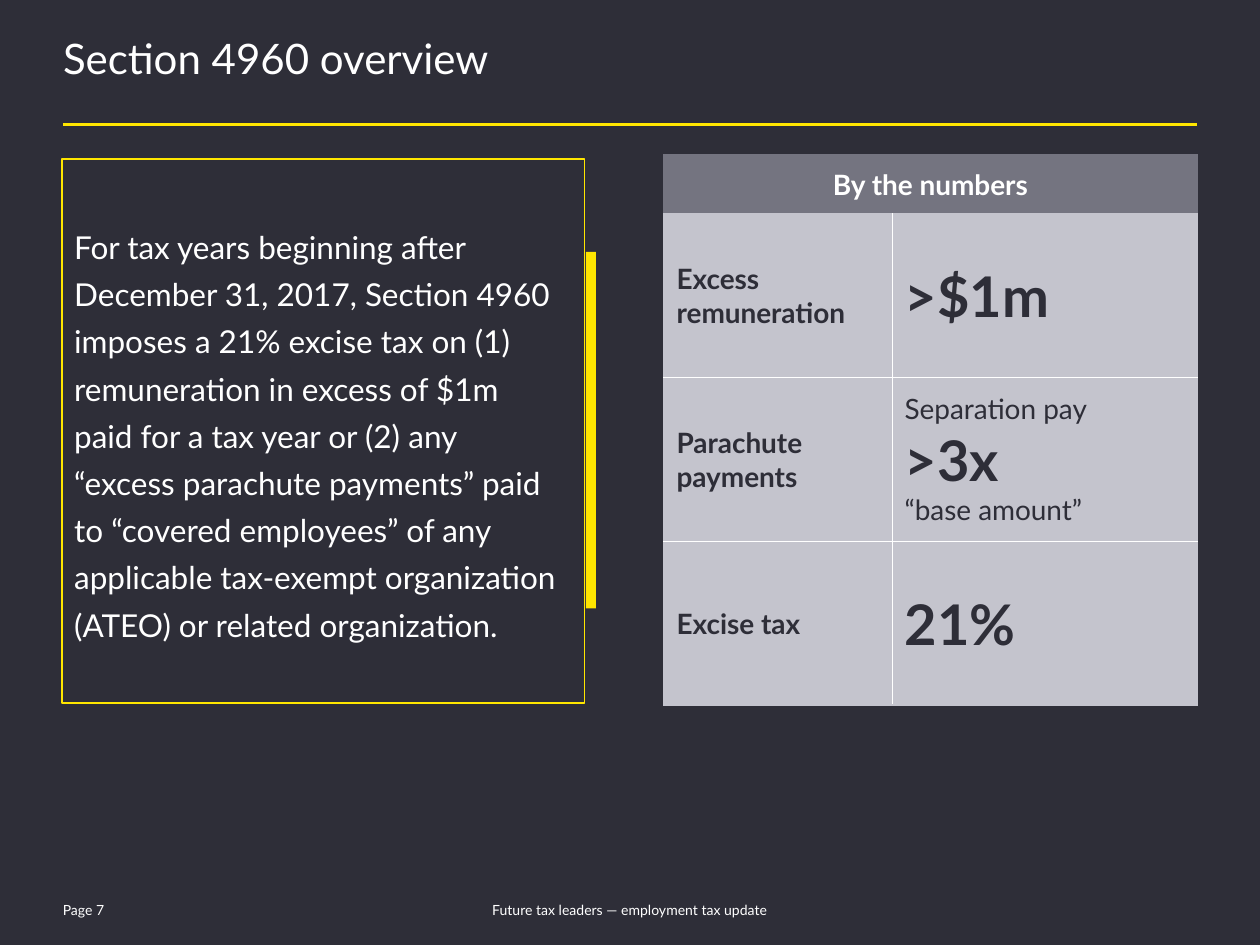
from dataclasses import dataclass

from lxml.etree import SubElement
from pptx import Presentation
from pptx.dml.color import RGBColor
from pptx.enum.shapes import MSO_CONNECTOR, MSO_SHAPE
from pptx.enum.text import MSO_ANCHOR, PP_ALIGN
from pptx.oxml.ns import qn
from pptx.util import Inches, Pt

COLORS = {
    "dark": "2E2E38",
    "yellow": "FFE600",
    "white": "FFFFFF",
    "header": "747480",
    "cell": "C4C4CD",
}
FONT = "Lato"
SLIDE_WIDTH, SLIDE_HEIGHT = Inches(10), Inches(7.5)
COLUMN, ROW = SLIDE_WIDTH / 100, SLIDE_HEIGHT / 75
SUMMARY = (
    "For tax years beginning after December 31, 2017, Section\u00a04960 imposes a 21% excise tax on "
    "(1) remuneration in excess of $1m paid for a tax year or (2)\u00a0any “excess parachute payments” "
    "paid to “covered employees” of any applicable tax-exempt organization (ATEO) or related organization."
).replace("\\u00a0", " ")


@dataclass(frozen=True)
class Box:
    left: float
    top: float
    width: float
    height: float

    def emu(self) -> tuple:
        return (round(self.left * COLUMN), round(self.top * ROW),
                round(self.width * COLUMN), round(self.height * ROW))


@dataclass(frozen=True)
class Line:
    text: str
    size: int = 16
    bold: bool = True


@dataclass(frozen=True)
class Footer:
    text: str
    box: Box
    align: PP_ALIGN


@dataclass(frozen=True)
class Figure:
    label: str
    paragraphs: tuple


FIGURES = [
    Figure("Excess remuneration", ((Line(">$1m", 32),),)),
    Figure("Parachute payments", (
        (Line("Separation pay", bold=False),),
        (Line(">3x", 32), Line("“base amount”", bold=False)),
    )),
    Figure("Excise tax", ((Line("21%", 32),),)),
]
FOOTERS = [
    Footer("Future tax leaders — employment tax update", Box(33.1, 71.2, 33.8, 2), PP_ALIGN.CENTER),
    Footer("Page 7", Box(4, 71.2, 7.3, 2), PP_ALIGN.LEFT),
]


def rgb(name: str) -> RGBColor:
    return RGBColor.from_string(COLORS[name])


def write(paragraph, lines: tuple, color: str, align=PP_ALIGN.LEFT) -> None:
    paragraph.text = "\v".join(line.text for line in lines)
    paragraph.alignment = align
    for run, line in zip(paragraph.runs, lines):
        run.font.name = FONT
        run.font.size = Pt(line.size)
        run.font.bold = line.bold
        run.font.color.rgb = rgb(color)


def set_margins(text_frame, left: float, top: float, right: float, bottom: float) -> None:
    text_frame.margin_left, text_frame.margin_top = Inches(left), Inches(top)
    text_frame.margin_right, text_frame.margin_bottom = Inches(right), Inches(bottom)


def add_title(slide, text: str, box: Box) -> None:
    title = slide.shapes.title
    title.left, title.top, title.width, title.height = box.emu()
    set_margins(title.text_frame, 0, 0, 0, 0)
    title.text_frame.vertical_anchor = MSO_ANCHOR.TOP
    paragraph = title.text_frame.paragraphs[0]
    write(paragraph, (Line(text, 24, False),), "white")
    paragraph.line_spacing = 0.85


def add_rule(slide, left: float, right: float, top: float) -> None:
    start, height, length, _ = Box(left, top, right - left, 0).emu()
    rule = slide.shapes.add_connector(MSO_CONNECTOR.STRAIGHT, start, height, start + length, height)
    rule.line.color.rgb = rgb("yellow")
    rule.line.width = Pt(1.5)
    SubElement(rule._element.spPr, qn("a:effectLst"))


def add_footer(slide, footer: Footer) -> None:
    text_frame = slide.shapes.add_textbox(*footer.box.emu()).text_frame
    text_frame.word_wrap = True
    text_frame.vertical_anchor = MSO_ANCHOR.MIDDLE
    set_margins(text_frame, 0.1, 0, 0.1, 0)
    write(text_frame.paragraphs[0], (Line(footer.text, 8, False),), "white", footer.align)


def add_rectangle(slide, box: Box):
    rectangle = slide.shapes.add_shape(MSO_SHAPE.RECTANGLE, *box.emu())
    rectangle.shadow.inherit = False
    return rectangle


def add_summary(slide, text: str, box: Box, accent_box: Box) -> None:
    frame = add_rectangle(slide, box)
    frame.fill.background()
    frame.line.color.rgb = rgb("yellow")
    frame.line.width = Pt(1)
    text_frame = frame.text_frame
    text_frame.word_wrap = True
    text_frame.vertical_anchor = MSO_ANCHOR.MIDDLE
    set_margins(text_frame, 0.1, 0.1, 0.2, 0.1)
    paragraph = text_frame.paragraphs[0]
    write(paragraph, (Line(text, 18, False),), "white")
    paragraph.line_spacing = 1.25
    accent = add_rectangle(slide, accent_box)
    accent.fill.solid()
    accent.fill.fore_color.rgb = rgb("yellow")
    accent.line.fill.background()


def style_cell(cell, fill: str, borders: dict, anchor=MSO_ANCHOR.MIDDLE) -> None:
    properties = cell._tc.get_or_add_tcPr()
    for side in "LRTB":
        color = borders[side]
        width = Pt(0.5) if color == "white" else Pt(1)
        border = SubElement(properties, qn(f"a:ln{side}"), w=str(width))
        SubElement(SubElement(border, qn("a:solidFill")), qn("a:srgbClr"), val=COLORS[color])
    cell.fill.solid()
    cell.fill.fore_color.rgb = rgb(fill)
    set_margins(cell, 0.1, 0.1, 0.1, 0.1)
    cell.vertical_anchor = anchor


def fill_cell(cell, paragraphs: tuple, color: str, align=PP_ALIGN.LEFT) -> None:
    text_frame = cell.text_frame
    for index, lines in enumerate(paragraphs):
        paragraph = text_frame.add_paragraph() if index else text_frame.paragraphs[0]
        write(paragraph, lines, color, align)


def add_figures(slide, heading: str, figures: list, box: Box) -> None:
    last = len(figures)
    table = slide.shapes.add_table(last + 1, 2, *box.emu()).table
    table.first_row = table.horz_banding = False
    for column, width in zip(table.columns, (18.1, 24.2)):
        column.width = round(width * COLUMN)
    for index, row in enumerate(table.rows):
        row.height = round((13 if index else 4.6) * ROW)

    header = table.cell(0, 0)
    header.merge(table.cell(0, 1))
    header_borders = {"L": "header", "R": "header", "T": "header", "B": "cell"}
    for column in range(2):
        style_cell(table.cell(0, column), "header", header_borders, MSO_ANCHOR.BOTTOM)
    fill_cell(header, ((Line(heading),),), "white", PP_ALIGN.CENTER)

    for row, figure in enumerate(figures, start=1):
        for column, paragraphs in enumerate((((Line(figure.label),),), figure.paragraphs)):
            outer = {"L": column == 0, "R": column == 1, "T": row == 1, "B": row == last}
            borders = {side: "cell" if edge else "white" for side, edge in outer.items()}
            cell = table.cell(row, column)
            style_cell(cell, "cell", borders)
            fill_cell(cell, paragraphs, "dark")


def main() -> None:
    presentation = Presentation()
    presentation.slide_width, presentation.slide_height = SLIDE_WIDTH, SLIDE_HEIGHT
    slide = presentation.slides.add_slide(presentation.slide_layouts[5])
    slide.background.fill.solid()
    slide.background.fill.fore_color.rgb = rgb("dark")
    for footer in FOOTERS:
        add_footer(slide, footer)
    add_rule(slide, 5, 95, 9.9)
    add_figures(slide, "By the numbers", FIGURES, Box(52.7, 12.3, 42.3, 43.6))
    add_title(slide, "Section 4960 overview", Box(5, 3.2, 90, 6.5))
    add_summary(slide, SUMMARY, Box(4.9, 12.6, 41.5, 43.2), Box(46.5, 20, 0.8, 28.3))
    presentation.save("out.pptx")


if __name__ == "__main__":
    main()
